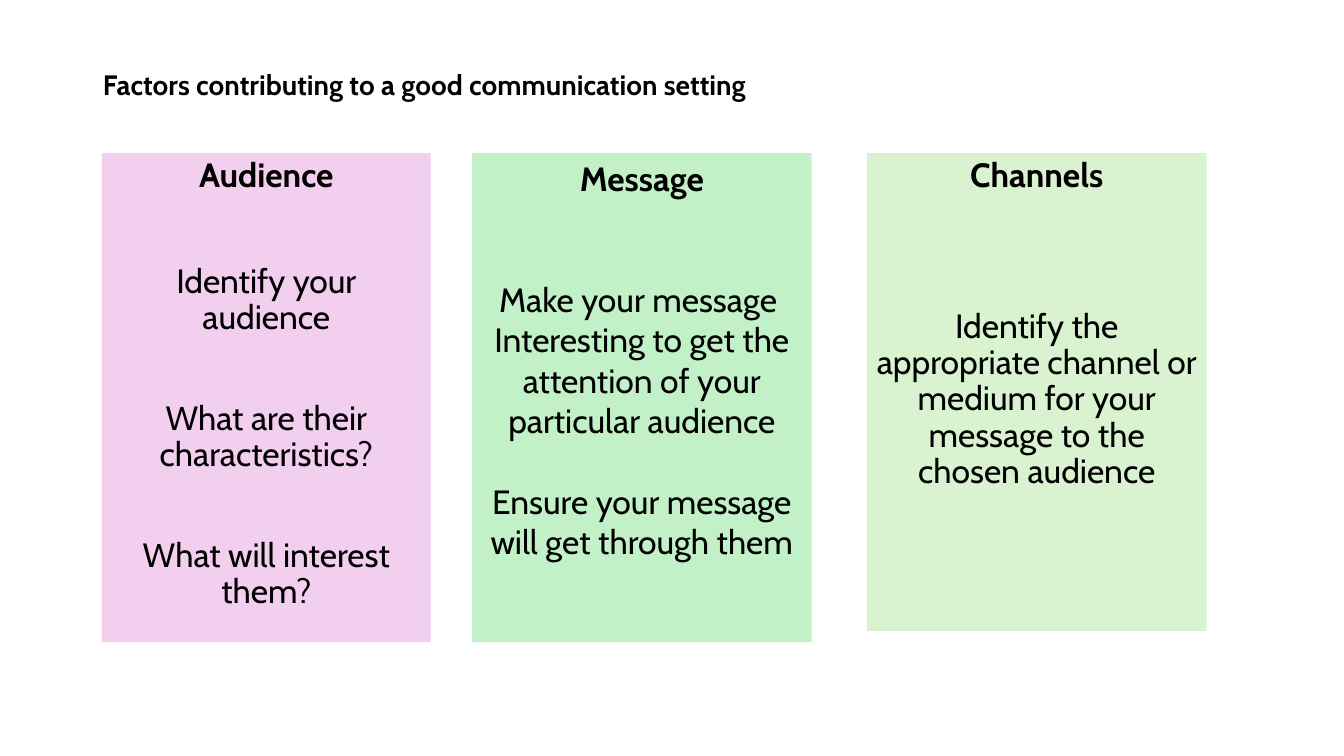
from pptx import Presentation
from pptx.dml.color import RGBColor
from pptx.enum import shapes, text
from pptx.util import Cm, Pt

BLACK = RGBColor(0x00, 0x00, 0x00)
PINK = RGBColor(0xF2, 0xCF, 0xEE)
MINT = RGBColor(0xC2, 0xF1, 0xC8)
LIME = RGBColor(0xD9, 0xF2, 0xD0)

COLUMN_TOP = 3.86

# left, width, height, fill, line spacing, heading, [(points before, body text)]
COLUMNS = [
    (2.57, 8.28, 12.32, PINK, 0.9, "Audience", [
        (50, "Identify your audience"),
        (46, "What are their characteristics?"),
        (46, "What will interest them?"),
    ]),
    (11.89, 8.56, 12.32, MINT, 1.0, "Message", [
        (57.6, "Make your message "),
        (0, "Interesting to get the attention of your particular audience"),
        (28.8, "Ensure your message will get through them"),
    ]),
    (21.84, 8.56, 12.04, LIME, 0.9, "Channels", [
        (82, "Identify the appropriate channel or medium for your "
             "message to the chosen audience"),
    ]),
]


def apply(target, formats):
    for name, value in formats.items():
        setattr(target, name, value)


class Deck:
    font = "Cabin"
    title_size = Pt(20)
    column_size = Pt(24)

    def __init__(self):
        self.prs = Presentation()
        apply(self.prs, {"slide_width": Cm(33.86), "slide_height": Cm(19.05)})

    def add_slide(self):
        self.s = self.prs.slides.add_slide(self.prs.slide_layouts[5])

    def fill_paragraph(self, p, words, size, bold, **formats):
        apply(p, formats)
        r = p.add_run()
        r.text = words
        apply(r.font, {"name": self.font, "size": size, "bold": bold})
        r.font.color.rgb = BLACK

    def title(self, words, left, top, width, height):
        sp = self.s.shapes.title
        apply(sp, {"left": Cm(left), "top": Cm(top),
                   "width": Cm(width), "height": Cm(height)})
        tf = sp.text_frame
        apply(tf, {"word_wrap": True, "auto_size": text.MSO_AUTO_SIZE.NONE,
                   "vertical_anchor": text.MSO_ANCHOR.MIDDLE})
        self.fill_paragraph(tf.paragraphs[0], words, self.title_size, True,
                            alignment=text.PP_ALIGN.LEFT, line_spacing=0.9)

    def column(self, left, width, height, fill, spacing, heading, body):
        sp = self.s.shapes.add_shape(shapes.MSO_SHAPE.RECTANGLE, Cm(left),
                                     Cm(COLUMN_TOP), Cm(width), Cm(height))
        sp.shadow.inherit = False
        sp.fill.solid()
        sp.fill.fore_color.rgb = fill
        sp.line.fill.background()
        tf = sp.text_frame
        apply(tf, {"word_wrap": True, "vertical_anchor": text.MSO_ANCHOR.TOP})
        for i, (before, words) in enumerate([(0, heading)] + body):
            p = tf.add_paragraph() if i else tf.paragraphs[0]
            self.fill_paragraph(p, words, self.column_size, i == 0,
                                alignment=text.PP_ALIGN.CENTER,
                                line_spacing=spacing, space_before=Pt(before))


def main():
    deck = Deck()
    deck.add_slide()
    deck.title("Factors contributing to a good communication setting",
               2.34, 1.02, 17.15, 2.29)
    for column in COLUMNS:
        deck.column(*column)
    deck.prs.save("out.pptx")


if __name__ == "__main__":
    main()
